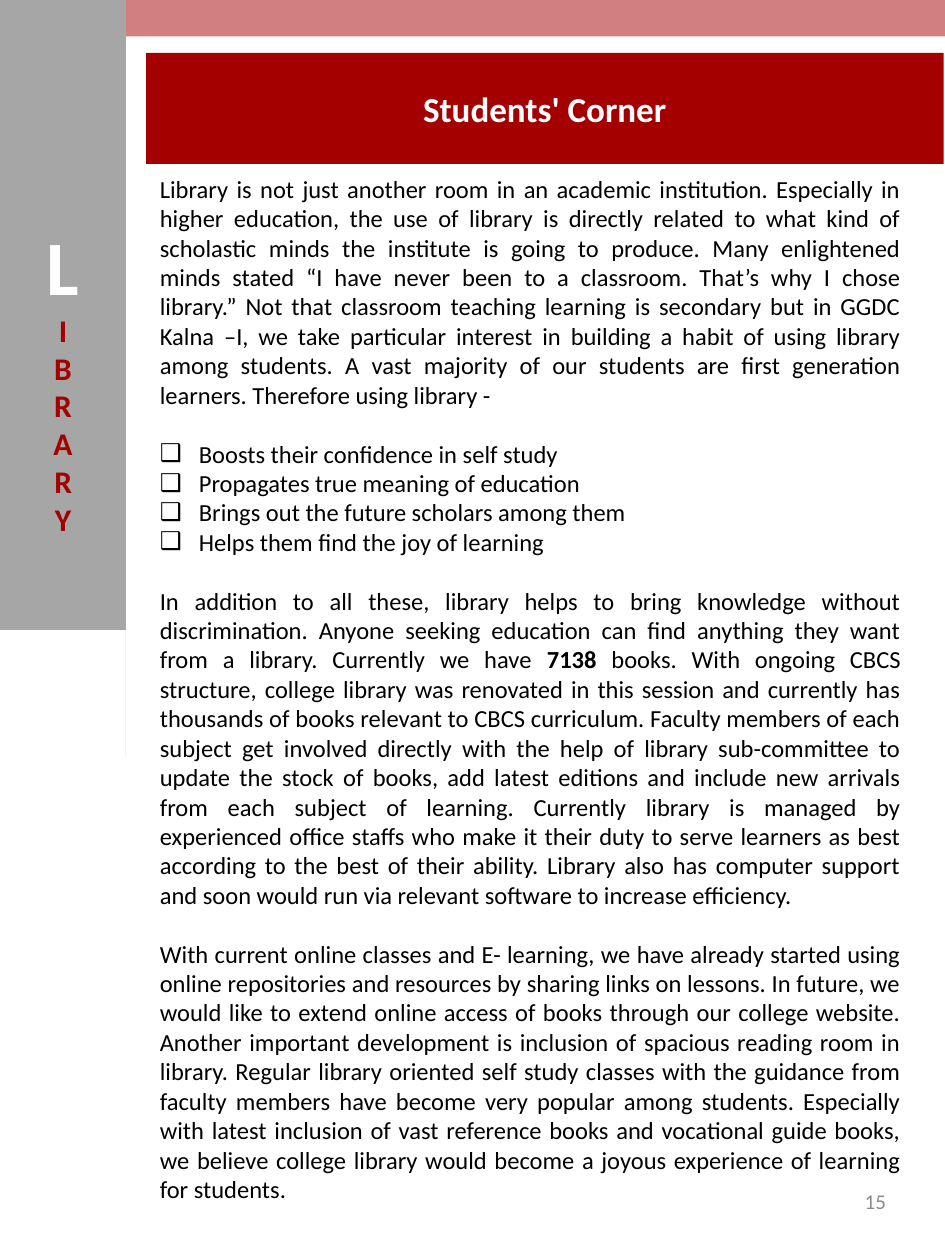
"""Build the Students' Corner page about the college library."""
import pptx
import pptx.dml.color
import pptx.enum.shapes
import pptx.enum.text
import pptx.oxml
import pptx.oxml.ns
import pptx.util
from pptx.util import Inches

RGBColor = pptx.dml.color.RGBColor
CRIMSON = RGBColor(0xA4, 0x00, 0x00)
RIBBON_GREY = RGBColor(0xA6, 0xA6, 0xA6)
NUMBER_GREY = RGBColor(0x8C, 0x8C, 0x8C)
WHITE = RGBColor(0xFF, 0xFF, 0xFF)
BLACK = RGBColor(0x00, 0x00, 0x00)

ALIGN = pptx.enum.text.PP_ALIGN
MIDDLE = pptx.enum.text.MSO_ANCHOR.MIDDLE
FONT = "Calibri"
BODY_SIZE = 14
BLOCK_GAP = 16.8
HANGING = Inches(0.31)

INTRODUCTION = (
    "Library is not just another room in an academic institution. Especially in higher education, "
    "the use of library is directly related to what kind of scholastic minds the institute is going "
    "to produce. Many enlightened minds stated “I have never been to a classroom. That’s why I chose "
    "library.” Not that classroom teaching learning is secondary but in GGDC Kalna –I, we take "
    "particular interest in building a habit of using library among students. A vast majority of our "
    "students are first generation learners. Therefore using library -"
)
BENEFITS = [
    "Boosts their confidence in self study",
    "Propagates true meaning of education",
    "Brings out the future scholars among them",
    "Helps them find the joy of learning",
]
BEFORE_COUNT = (
    "In addition to all these, library helps to bring knowledge without discrimination. Anyone "
    "seeking education can find anything they want from a library. Currently we have "
)
BOOK_COUNT = "7138 "
AFTER_COUNT = (
    "books. With ongoing CBCS structure, college library was renovated in this session and currently "
    "has thousands of books relevant to CBCS curriculum. Faculty members of each subject get involved "
    "directly with the help of library sub-committee to update the stock of books, add latest editions "
    "and include new arrivals from each subject of learning. Currently library is managed by "
    "experienced office staffs who make it their duty to serve learners as best according to the best "
    "of their ability. Library also has computer support and soon would run via relevant software to "
    "increase efficiency."
)
OUTLOOK = (
    "With current online classes and E- learning, we have already started using online repositories "
    "and resources by sharing links on lessons. In future, we would like to extend online access of "
    "books through our college website. Another important development is inclusion of spacious reading "
    "room in library. Regular library oriented self study classes with the guidance from faculty "
    "members have become very popular among students. Especially with latest inclusion of vast "
    "reference books and vocational guide books, we believe college library would become a joyous "
    "experience of learning for students."
)


def write(paragraph, pieces, align, size=BODY_SIZE, color=BLACK, bold=()):
    paragraph.alignment = align
    for piece in pieces:
        run = paragraph.add_run()
        run.text = piece
        run.font.name = FONT
        run.font.size = pptx.util.Pt(size)
        run.font.color.rgb = color
        run.font.bold = piece in bold


def paint(shape, color):
    shape.shadow.inherit = False
    shape.fill.solid()
    shape.fill.fore_color.rgb = color
    shape.line.fill.background()


def add_band(slide, left, top, width, height):
    band = slide.shapes.add_shape(
        pptx.enum.shapes.MSO_SHAPE.RECTANGLE,
        Inches(left), Inches(top), Inches(width), Inches(height))
    paint(band, CRIMSON)
    return band


def add_top_strip(slide):
    strip = add_band(slide, -0.02, -0.02, 7.52, 0.31)
    color = strip.fill._xPr.find(".//" + pptx.oxml.ns.qn("a:srgbClr"))
    color.append(pptx.oxml.parse_xml(
        f'<a:alpha {pptx.oxml.ns.nsdecls("a")} val="50000"/>'))


def add_title(slide):
    banner = add_band(slide, 1.16, 0.42, 6.33, 0.88)
    banner.text_frame.vertical_anchor = MIDDLE
    write(banner.text_frame.paragraphs[0], ["Students' Corner"], ALIGN.CENTER,
          20, WHITE, ["Students' Corner"])


def curve(start, control_a, control_b, end, steps=40):
    points = []
    for step in range(1, steps + 1):
        t = step / steps
        weights = ((1 - t) ** 3, 3 * t * (1 - t) ** 2, 3 * t ** 2 * (1 - t), t ** 3)
        knots = (start, control_a, control_b, end)
        points.append(tuple(sum(w * k[axis] for w, k in zip(weights, knots))
                            for axis in (0, 1)))
    return points


def add_ribbon(slide):
    right_end, notch, left_end = (1.19, 5.37), (0.6, 5.39), (0.03, 5.37)
    outline = [(1.19, 0.42), right_end]
    outline += curve(right_end, (1.01, 6.19), (0.79, 5.39), notch)
    outline += curve(notch, (0.41, 5.39), (0.04, 6.19), left_end)
    builder = slide.shapes.build_freeform(0.03, 0.42, scale=Inches(1))
    builder.add_line_segments(outline, close=True)
    ribbon = builder.convert_to_shape()
    paint(ribbon, RIBBON_GREY)
    frame = ribbon.text_frame
    frame.vertical_anchor = MIDDLE
    frame._txBody.bodyPr.set("vert", "wordArtVert")
    write(frame.paragraphs[0], ["L"], ALIGN.CENTER, 44, WHITE, ["L"])
    write(frame.paragraphs[0], ["IBRARY"], ALIGN.CENTER, 18, CRIMSON, ["IBRARY"])


def add_text_box(slide, left, top, width, height):
    box = slide.shapes.add_textbox(
        Inches(left), Inches(top), Inches(width), Inches(height))
    box.text_frame.word_wrap = True
    return box.text_frame


def add_page_number(slide):
    frame = add_text_box(slide, 5.38, 9.27, 1.75, 0.53)
    frame.vertical_anchor = MIDDLE
    write(frame.paragraphs[0], ["15"], ALIGN.RIGHT, 12, NUMBER_GREY)


def set_checkbox_bullet(paragraph):
    properties = paragraph._p.get_or_add_pPr()
    properties.set("marL", str(HANGING))
    properties.set("indent", str(-HANGING))
    namespace = pptx.oxml.ns.nsdecls("a")
    properties.append(pptx.oxml.parse_xml(f'<a:buFont {namespace} typeface="Arial"/>'))
    properties.append(pptx.oxml.parse_xml(f'<a:buChar {namespace} char="❑"/>'))


def add_article(slide):
    frame = add_text_box(slide, 1.17, 1.33, 6.08, 8.58)
    write(frame.paragraphs[0], [INTRODUCTION], ALIGN.JUSTIFY)
    for index, benefit in enumerate(BENEFITS):
        item = frame.add_paragraph()
        set_checkbox_bullet(item)
        item.space_before = pptx.util.Pt(0 if index else BLOCK_GAP)
        write(item, [benefit], ALIGN.LEFT)
    for pieces in ([BEFORE_COUNT, BOOK_COUNT, AFTER_COUNT], [OUTLOOK]):
        block = frame.add_paragraph()
        block.space_before = pptx.util.Pt(BLOCK_GAP)
        write(block, pieces, ALIGN.JUSTIFY, bold=[BOOK_COUNT])


def main():
    deck = pptx.Presentation()
    deck.slide_width, deck.slide_height = Inches(7.5), Inches(10)
    slide = deck.slides.add_slide(deck.slide_layouts[6])
    add_top_strip(slide)
    add_title(slide)
    add_ribbon(slide)
    add_page_number(slide)
    add_article(slide)
    deck.save("out.pptx")


if __name__ == "__main__":
    main()
